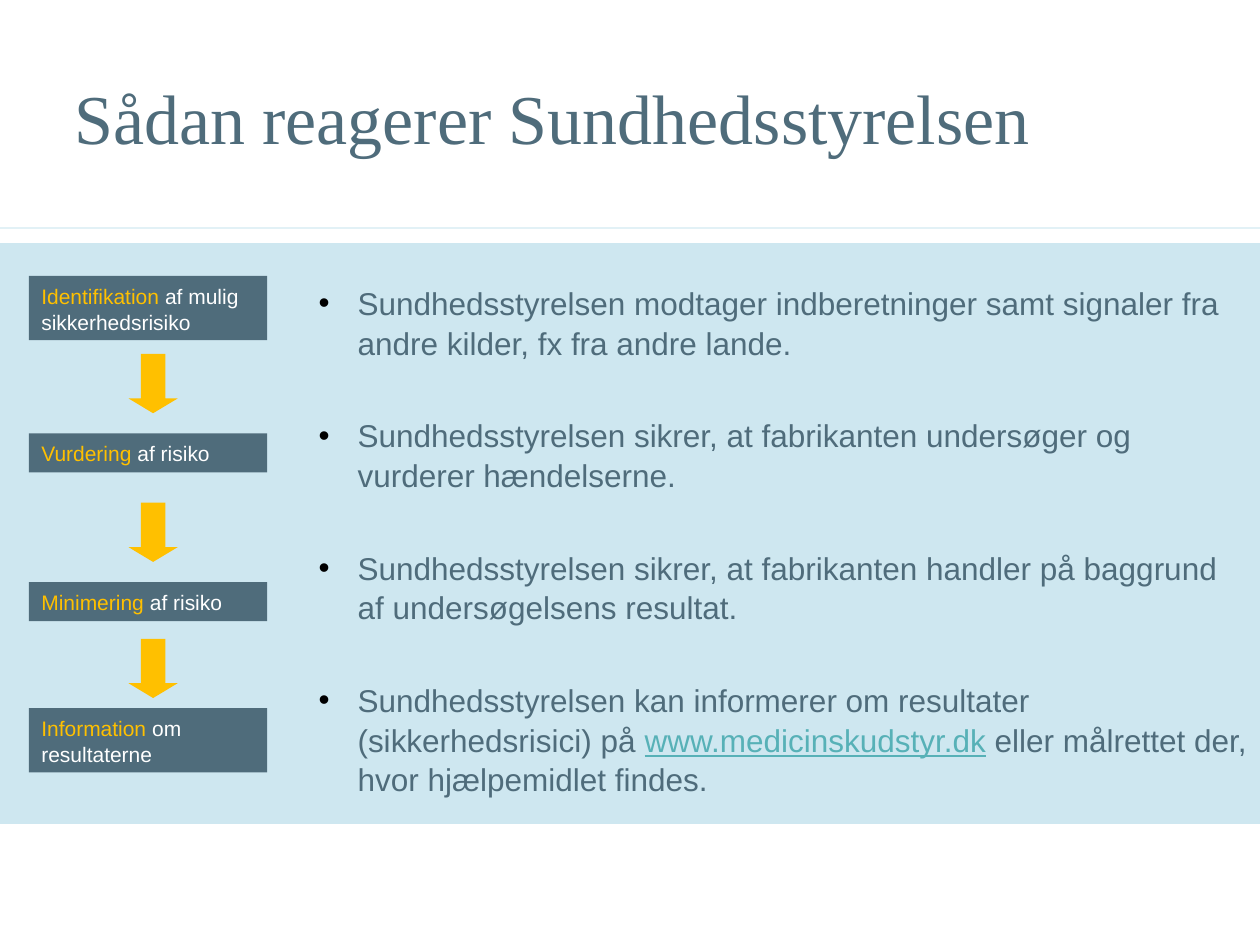
from dataclasses import dataclass

from lxml import etree
from pptx import Presentation
from pptx.dml.color import RGBColor
from pptx.enum import shapes, text
from pptx.oxml import ns
from pptx.util import Inches, Pt


@dataclass(frozen=True)
class Theme:
    """Colours, fonts and type sizes of the slide."""
    slate: str = "4F6C7B"
    amber: str = "FFC000"
    panel: str = "CEE7F0"
    rule: str = "E2F1F6"
    link: str = "57B1B7"
    white: str = "FFFFFF"
    bullet: str = "000000"
    sans: str = "Arial"
    serif: str = "Times New Roman"
    title_size: int = 40
    body_size: int = 18
    step_size: int = 12
    line_spacing: float = 1.05


THEME = Theme()

STEPS = [
    (2.19, 0.51, "Identifikation", " af mulig sikkerhedsrisiko"),
    (3.44, 0.31, "Vurdering", " af risiko"),
    (4.62, 0.31, "Minimering", " af risiko"),
    (5.62, 0.51, "Information", " om resultaterne"),
]
ARROW_TOPS = [2.81, 3.99, 5.07]
ACTIONS = [
    [("Sundhedsstyrelsen modtager indberetninger samt signaler fra andre kilder, fx fra andre lande.", THEME.slate)],
    [("Sundhedsstyrelsen sikrer, at fabrikanten undersøger og vurderer hændelserne.", THEME.slate)],
    [("Sundhedsstyrelsen sikrer, at fabrikanten handler på baggrund af undersøgelsens resultat.", THEME.slate)],
    [("Sundhedsstyrelsen kan informerer om resultater (sikkerhedsrisici) på ", THEME.slate),
     ("www.medicinskudstyr.dk", THEME.link),
     (" eller målrettet der, hvor hjælpemidlet findes.", THEME.slate)],
]


def add_bullet(paragraph, margin, hanging):
    """Give a paragraph a hanging bullet."""
    props = paragraph._p.get_or_add_pPr()
    props.set("marL", str(Inches(margin)))
    props.set("indent", str(-Inches(hanging)))
    colour = etree.SubElement(props, ns.qn("a:buClr"))
    etree.SubElement(colour, ns.qn("a:srgbClr"), val=THEME.bullet)
    etree.SubElement(props, ns.qn("a:buFont"), typeface=THEME.sans)
    etree.SubElement(props, ns.qn("a:buChar"), char="•")


def write_text(shape, paragraphs, *, size, font=THEME.sans, insets=(0.1, 0.05, 0.1, 0.05),
               anchor=text.MSO_ANCHOR.TOP, spacing=None, gap=0, bullet=None):
    """Fill a shape with paragraphs made of (wording, colour) runs."""
    frame = shape.text_frame
    frame.word_wrap = True
    frame.vertical_anchor = anchor
    frame.margin_left, frame.margin_top, frame.margin_right, frame.margin_bottom = map(Inches, insets)
    for index, runs in enumerate(paragraphs):
        paragraph = frame.add_paragraph() if index else frame.paragraphs[0]
        if bullet:
            add_bullet(paragraph, *bullet)
        paragraph.alignment = text.PP_ALIGN.LEFT
        paragraph.line_spacing = spacing
        if index and gap:
            paragraph.space_before = Pt(gap)
        for wording, colour in runs:
            run = paragraph.add_run()
            run.text = wording
            run.font.name = font
            run.font.size = Pt(size)
            run.font.color.rgb = RGBColor.from_string(colour)
            if colour == THEME.link:
                run.font.underline = True


def add_block(slide, kind, box, colour):
    """Add a plain filled shape without outline or shadow."""
    block = slide.shapes.add_shape(kind, *map(Inches, box))
    block.shadow.inherit = False
    block.fill.solid()
    block.fill.fore_color.rgb = RGBColor.from_string(colour)
    block.line.fill.background()
    return block


def add_rule(slide, top):
    """Draw the thin line across the slide."""
    rule = slide.shapes.add_connector(shapes.MSO_CONNECTOR.STRAIGHT, 0, Inches(top), Inches(10), Inches(top))
    rule.line.color.rgb = RGBColor.from_string(THEME.rule)
    rule.line.width = Pt(1)
    etree.SubElement(rule._element.spPr, ns.qn("a:effectLst"))


def add_step(slide, top, height, keyword, rest):
    """Add one step box with its highlighted keyword."""
    step = add_block(slide, shapes.MSO_SHAPE.RECTANGLE, (0.23, top, 1.89, height), THEME.slate)
    write_text(step, [[(keyword, THEME.amber), (rest, THEME.white)]],
               size=THEME.step_size, spacing=THEME.line_spacing)


def add_arrow(slide, top):
    """Add a down arrow between two steps."""
    arrow = add_block(slide, shapes.MSO_SHAPE.DOWN_ARROW, (1.02, top, 0.39, 0.47), THEME.amber)
    arrow.adjustments[0] = 0.5
    arrow.adjustments[1] = 0.3


def add_text(slide, box, paragraphs, **style):
    """Add a text box with formatted text."""
    write_text(slide.shapes.add_textbox(*map(Inches, box)), paragraphs, **style)


def main():
    """Build the slide and save it."""
    deck = Presentation()
    deck.slide_width, deck.slide_height = Inches(10), Inches(7.5)
    slide = deck.slides.add_slide(deck.slide_layouts[6])

    add_block(slide, shapes.MSO_SHAPE.RECTANGLE, (0, 1.93, 10, 4.61), THEME.panel)
    add_rule(slide, 1.81)
    add_text(slide, (1.93, 1.65, 8.07, 5.85), ACTIONS, size=THEME.body_size, insets=(0.1, 0.59, 0.1, 0.05),
             spacing=THEME.line_spacing, gap=30.25, bullet=(0.81, 0.31))
    for step in STEPS:
        add_step(slide, *step)
    for top in ARROW_TOPS:
        add_arrow(slide, top)
    add_text(slide, (0.59, 0.53, 8.82, 1.17), [[("Sådan reagerer Sundhedsstyrelsen", THEME.slate)]],
             size=THEME.title_size, font=THEME.serif, insets=(0, 0.06, 0, 0))

    deck.save("out.pptx")


if __name__ == "__main__":
    main()
